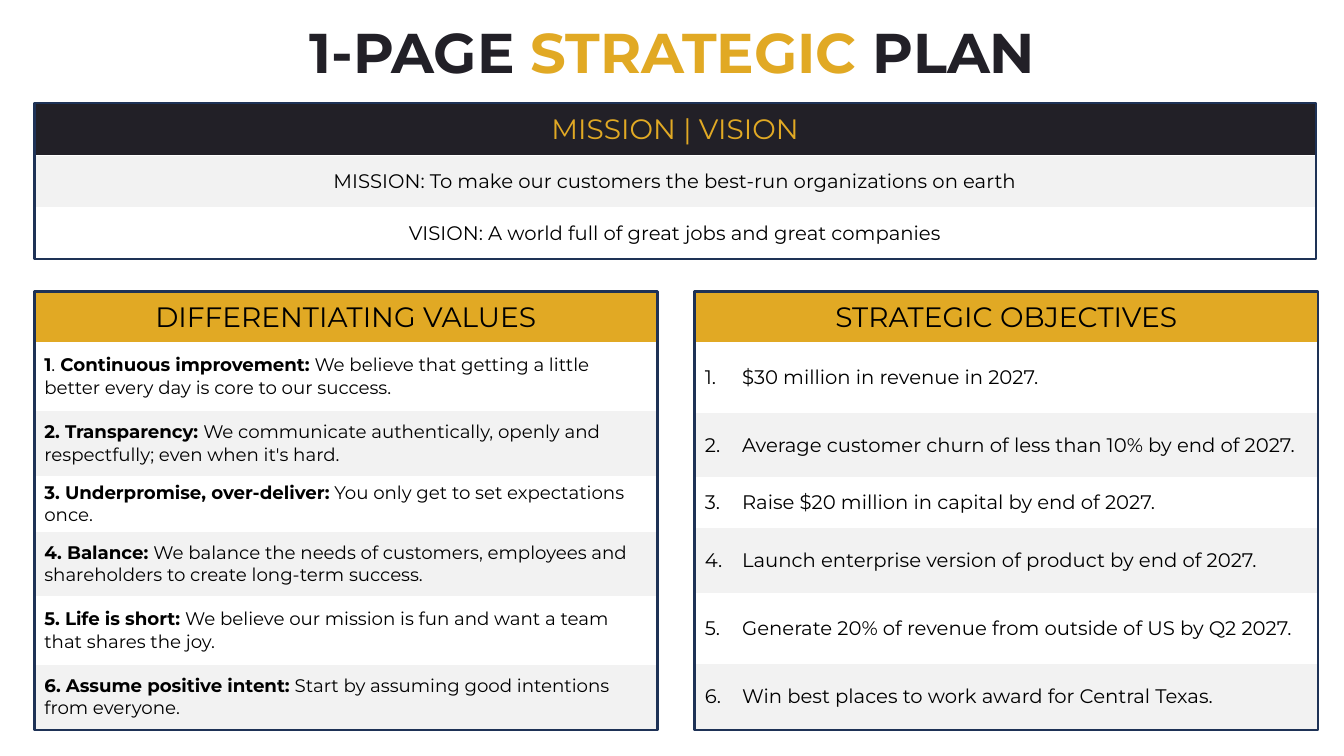
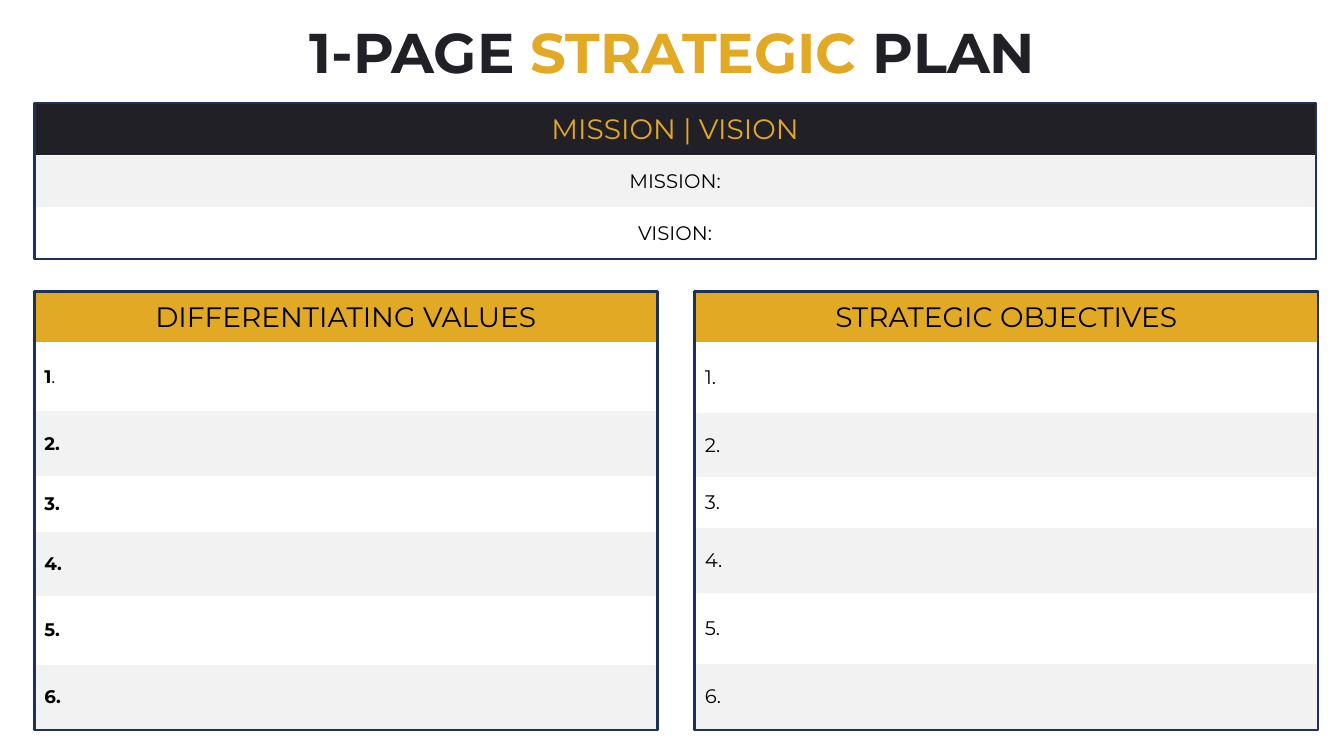
from pptx import Presentation
from pptx.dml.color import RGBColor
from pptx.enum.shapes import MSO_SHAPE
from pptx.enum.text import MSO_ANCHOR, MSO_AUTO_SIZE, PP_ALIGN
from pptx.oxml.ns import qn
from pptx.util import Inches, Pt
from lxml.etree import SubElement

INK = RGBColor(0x22, 0x20, 0x27)
GOLD = RGBColor(0xE1, 0xA9, 0x24)
NAVY = RGBColor(0x1E, 0x32, 0x56)
GREY = RGBColor(0xF2, 0xF2, 0xF2)
WHITE = RGBColor(0xFF, 0xFF, 0xFF)
BLACK = RGBColor(0x00, 0x00, 0x00)
FONT = "Montserrat"

SLIDE_WIDTH, SLIDE_HEIGHT = 13.33, 7.5
MARGIN, COLUMN, GUTTER = 0.34, 6.18, 0.37
SECOND_COLUMN = MARGIN + COLUMN + GUTTER
FULL_WIDTH = 12.71
MISSION_TOP, LISTS_TOP = 1.02, 2.89
MISSION_ROWS = [0.52] * 3
VALUE_ROWS = [0.51, 0.67, 0.66, 0.54, 0.65, 0.67, 0.65]
OBJECTIVE_ROWS = [0.51, 0.69, 0.65, 0.49, 0.66, 0.69, 0.66]
MISSION_HEIGHT, LISTS_HEIGHT = 1.55, 4.35
NUMBER_INDENT = 0.37

MISSION = "To make our customers the best-run organizations on earth"
VISION = "A world full of great jobs and great companies"
VALUES = [
    ("Continuous improvement:", "We believe that getting a little better every day is core to our success."),
    ("Transparency:", "We communicate authentically, openly and respectfully; even when it's hard."),
    ("Underpromise, over-deliver:", "You only get to set expectations once."),
    ("Balance:", "We balance the needs of customers, employees and shareholders "
                 "to create long-term success."),
    ("Life is short:", "We believe our mission is fun and want a team that shares the joy."),
    ("Assume positive intent:", "Start by assuming good intentions from everyone."),
]
OBJECTIVES = [
    "$30 million in revenue in 2027.",
    "Average customer churn of less than 10% by end of 2027.",
    "Raise $20 million in capital by end of 2027.",
    "Launch enterprise version of product by end of 2027.",
    "Generate 20% of revenue from outside of US by Q2 2027.",
    "Win best places to work award for Central Texas.",
]


def add_run(paragraph, text, size, color=BLACK, bold=False):
    run = paragraph.add_run()
    run.text = text
    run.font.name = FONT
    run.font.size = Pt(size)
    run.font.bold = bold
    run.font.color.rgb = color


def number_paragraph(paragraph, number):
    properties = paragraph._p.get_or_add_pPr()
    properties.set("marL", str(Inches(NUMBER_INDENT)))
    properties.set("indent", str(-Inches(NUMBER_INDENT)))
    SubElement(properties, qn("a:buAutoNum"), type="arabicPeriod", startAt=str(number))


def add_title(slide):
    title = slide.shapes.title
    title.left, title.top = Inches(1.37), Inches(0.25)
    title.width, title.height = Inches(10.6), Inches(0.66)
    frame = title.text_frame
    frame.auto_size = MSO_AUTO_SIZE.NONE
    frame.vertical_anchor = MSO_ANCHOR.TOP
    heading = frame.paragraphs[0]
    heading.alignment = PP_ALIGN.CENTER
    heading.line_spacing = 0.8
    for text, color in (("1-PAGE ", INK), ("STRATEGIC", GOLD), (" PLAN", INK)):
        add_run(heading, text, 40, color, True)


def add_panel(slide, left, top, width, row_heights, heading, fill, color):
    table = slide.shapes.add_table(
        len(row_heights), 1, Inches(left), Inches(top),
        Inches(width), Inches(sum(row_heights))).table
    table.horz_banding = False
    for index, height in enumerate(row_heights):
        table.rows[index].height = Inches(height)
        cell = table.cell(index, 0)
        cell.vertical_anchor = MSO_ANCHOR.MIDDLE
        cell.fill.solid()
        cell.fill.fore_color.rgb = GREY if index % 2 == 0 else WHITE
    header = table.cell(0, 0)
    header.fill.fore_color.rgb = fill
    paragraphs = [row.cells[0].text_frame.paragraphs[0] for row in table.rows]
    paragraphs[0].alignment = PP_ALIGN.CENTER
    add_run(paragraphs[0], heading, 20, color)
    return table, paragraphs[1:]


def shade_rows(table, first, second):
    for index in range(1, len(table.rows)):
        table.cell(index, 0).fill.fore_color.rgb = first if index % 2 else second


def add_frame(slide, left, top, width, height):
    frame = slide.shapes.add_shape(
        MSO_SHAPE.RECTANGLE, Inches(left), Inches(top), Inches(width), Inches(height))
    frame.shadow.inherit = False
    frame.fill.background()
    frame.line.color.rgb = NAVY
    frame.line.width = Pt(1.75)


def add_mission(slide, statements):
    table, paragraphs = add_panel(slide, MARGIN, MISSION_TOP, FULL_WIDTH, MISSION_ROWS,
                                  "MISSION | VISION", INK, GOLD)
    shade_rows(table, GREY, WHITE)
    for paragraph, statement in zip(paragraphs, statements):
        paragraph.alignment = PP_ALIGN.CENTER
        add_run(paragraph, statement, 14)
    add_frame(slide, MARGIN, MISSION_TOP, FULL_WIDTH, MISSION_HEIGHT)


def add_values(slide, values):
    table, paragraphs = add_panel(slide, MARGIN, LISTS_TOP, COLUMN, VALUE_ROWS,
                                  "DIFFERENTIATING VALUES", GOLD, BLACK)
    shade_rows(table, WHITE, GREY)
    for number, paragraph in enumerate(paragraphs, 1):
        add_run(paragraph, str(number), 13, bold=True)
        add_run(paragraph, ".", 13, bold=number > 1)
        if values:
            name, belief = values[number - 1]
            add_run(paragraph, f" {name} ", 13, bold=True)
            add_run(paragraph, belief, 13)
    add_frame(slide, MARGIN, LISTS_TOP, COLUMN, LISTS_HEIGHT)


def add_objectives(slide, objectives):
    table, paragraphs = add_panel(slide, SECOND_COLUMN, LISTS_TOP, COLUMN, OBJECTIVE_ROWS,
                                  "STRATEGIC OBJECTIVES", GOLD, BLACK)
    shade_rows(table, WHITE, GREY)
    for number, paragraph in enumerate(paragraphs, 1):
        if objectives:
            number_paragraph(paragraph, number)
            add_run(paragraph, objectives[number - 1], 14)
        else:
            add_run(paragraph, f"{number}.", 14)
    add_frame(slide, SECOND_COLUMN, LISTS_TOP, COLUMN, LISTS_HEIGHT)


def add_plan(deck, statements, values=None, objectives=None):
    slide = deck.slides.add_slide(deck.slide_layouts[5])
    add_title(slide)
    add_objectives(slide, objectives)
    add_values(slide, values)
    add_mission(slide, statements)


def main():
    deck = Presentation()
    deck.slide_width, deck.slide_height = Inches(SLIDE_WIDTH), Inches(SLIDE_HEIGHT)
    add_plan(deck, [f"MISSION: {MISSION}", f"VISION: {VISION}"], VALUES, OBJECTIVES)
    add_plan(deck, ["MISSION:", "VISION:"])
    deck.save("out.pptx")


if __name__ == "__main__":
    main()
